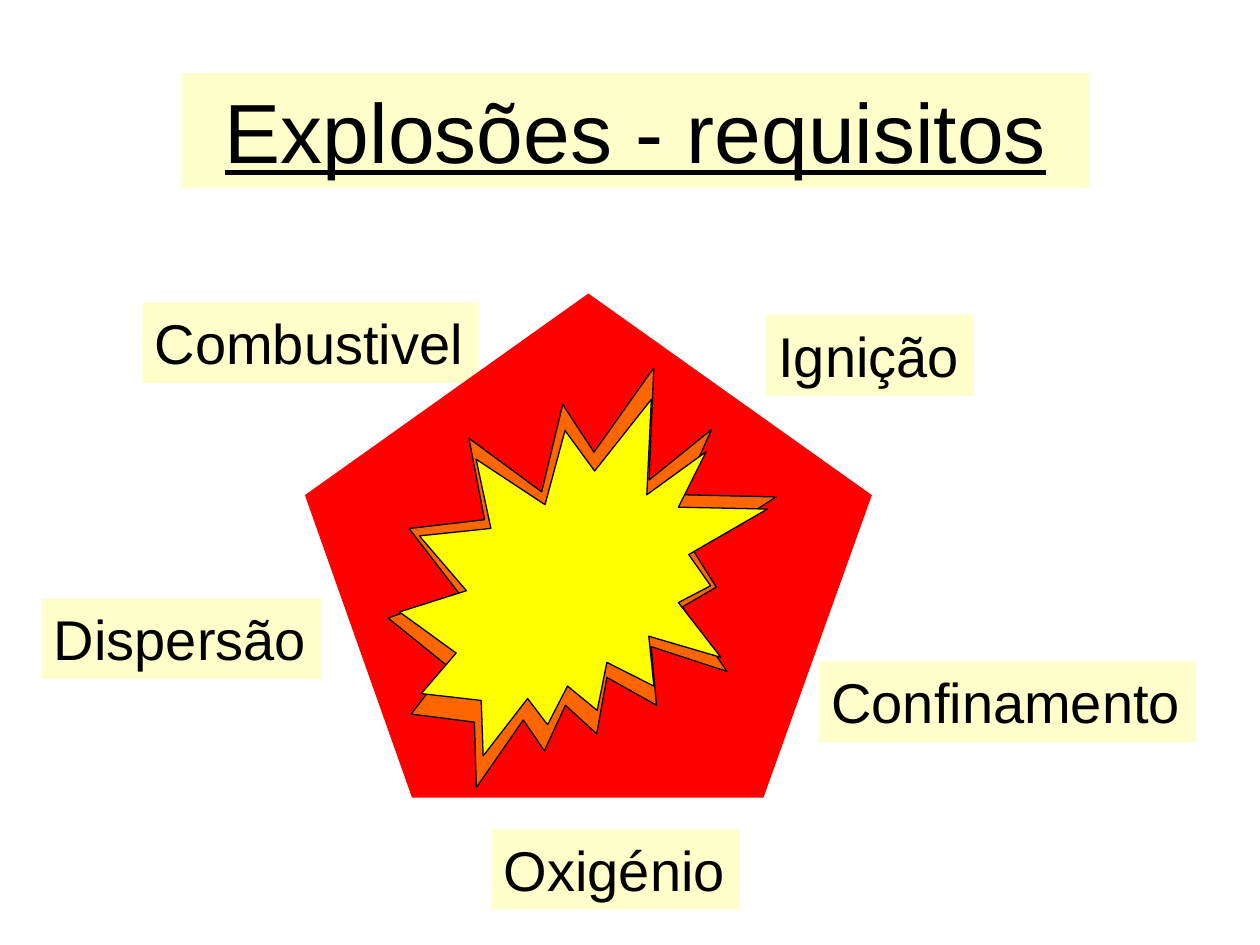
from dataclasses import dataclass

from pptx import Presentation
from pptx.dml.color import RGBColor as RGB
from pptx.enum.shapes import MSO_SHAPE as Kind
from pptx.enum.text import MSO_ANCHOR as Anchor, MSO_AUTO_SIZE as Fit, PP_ALIGN as Align
from pptx.util import Inches, Pt


@dataclass(frozen=True)
class Theme:
    """Colours, font and type sizes of the slide."""
    font: str = "Arial"
    ink: str = "000000"
    cream: str = "FFFFCC"
    red: str = "FF0000"
    flame: str = "FF6600"
    glow: str = "FFFF00"
    head: int = 48
    label: int = 32
    edge: float = 0.75


THEME = Theme()
LABELS = [
    ("Oxigénio", 3.9, 6.58, 1.97),
    ("Confinamento", 6.5, 5.25, 2.99),
    ("Ignição", 6.08, 2.5, 1.65),
    ("Combustivel", 1.13, 2.4, 2.67),
    ("Dispersão", 0.33, 4.75, 2.22),
]
BASE = [(2.42, 3.93), (3.27, 6.33), (6.06, 6.33), (6.92, 3.93)]
BURSTS = [
    ((3.08, 2.92, 3.08, 3.33), THEME.flame),
    ((3.17, 3.17, 2.92, 2.83), THEME.glow),
]


def paint(shape, fill, line=None):
    """Fill a shape and draw or drop its outline."""
    shape.fill.solid()
    shape.fill.fore_color.rgb = RGB.from_string(fill)
    if line:
        shape.line.color.rgb = RGB.from_string(line)
        shape.line.width = Pt(THEME.edge)
    else:
        shape.line.fill.background()


def write(shape, text, size, wrap, align, under=None):
    """Put one run of text on a cream panel."""
    paint(shape, THEME.cream)
    frame = shape.text_frame
    frame.word_wrap = wrap
    frame.auto_size = Fit.SHAPE_TO_FIT_TEXT
    frame.vertical_anchor = Anchor.TOP
    para = frame.paragraphs[0]
    para.alignment = align
    run = para.add_run()
    run.text = text
    run.font.name = THEME.font
    run.font.size = Pt(size)
    run.font.underline = under
    run.font.color.rgb = RGB.from_string(THEME.ink)


def add_title(slide, text, box):
    """Move the title placeholder and write the heading."""
    title = slide.shapes.title
    title.left, title.top, title.width, title.height = map(Inches, box)
    write(title, text, THEME.head, True, Align.CENTER, True)


def add_label(slide, text, left, top, width):
    """Add a requirement beside the pentagon."""
    box = slide.shapes.add_textbox(*map(Inches, (left, top, width, 0.64)))
    write(box, text, THEME.label, False, Align.LEFT)


def add_form(slide, kind, box, fill, line=None):
    """Add a preset shape without a shadow."""
    shape = slide.shapes.add_shape(kind, *map(Inches, box))
    shape.shadow.inherit = False
    paint(shape, fill, line)


def add_base(slide, points):
    """Add the lower part of the pentagon."""
    start, *rest = [(Inches(x), Inches(y)) for x, y in points]
    pen = slide.shapes.build_freeform(*start)
    pen.add_line_segments(rest, close=True)
    shape = pen.convert_to_shape()
    shape.shadow.inherit = False
    paint(shape, THEME.red)


def main():
    """Build and save the slide."""
    deck = Presentation()
    deck.slide_width, deck.slide_height = Inches(10), Inches(7.5)
    slide = deck.slides.add_slide(deck.slide_layouts.get_by_name("Title Only"))
    add_title(slide, "Explosões - requisitos", (1.44, 0.58, 7.21, 0.91))
    for label in LABELS:
        add_label(slide, *label)
    add_form(slide, Kind.ISOSCELES_TRIANGLE, (2.42, 2.33, 4.5, 1.6), THEME.red)
    add_base(slide, BASE)
    for box, fill in BURSTS:
        add_form(slide, Kind.EXPLOSION2, box, fill, THEME.ink)
    deck.save("out.pptx")


if __name__ == "__main__":
    main()
